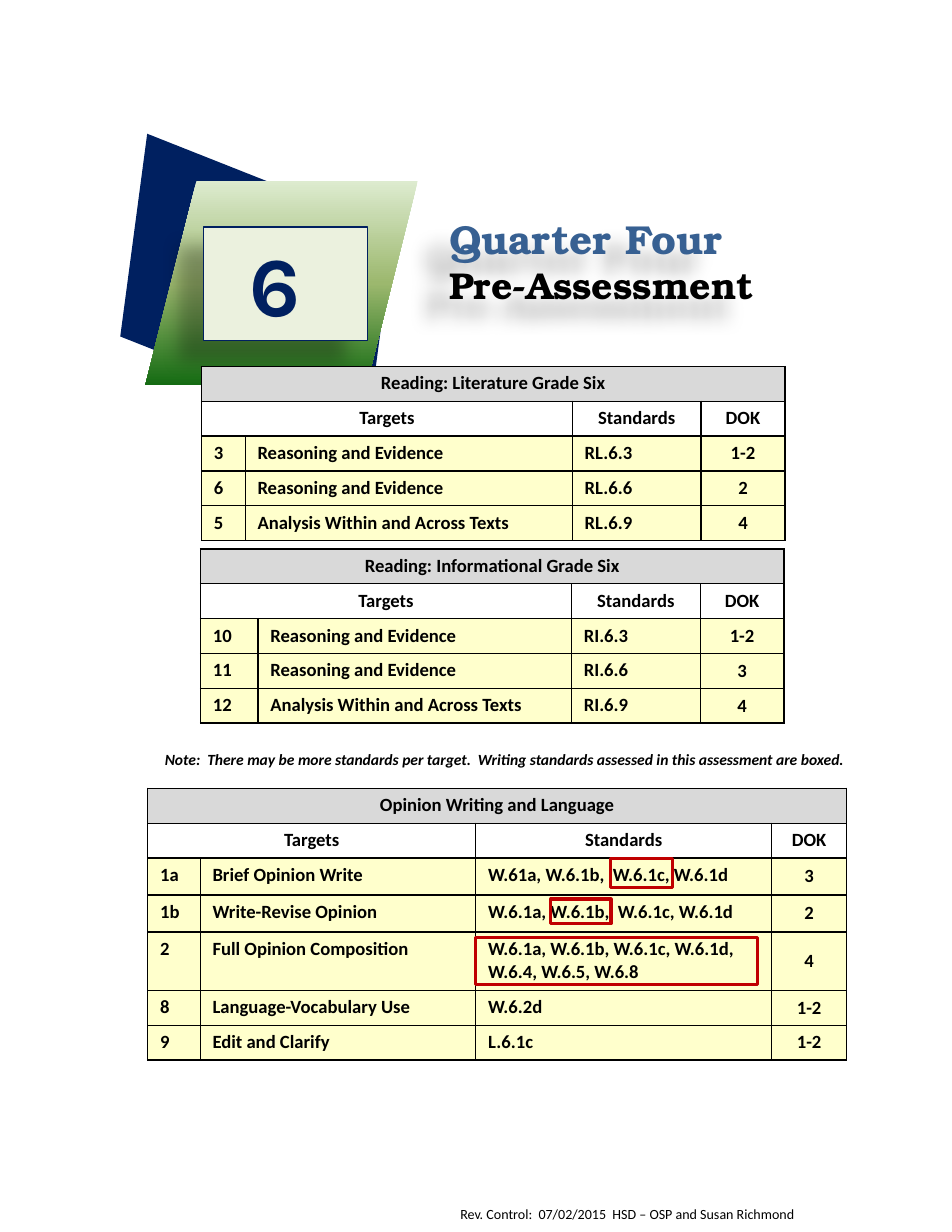
from copy import deepcopy

from lxml import etree
from pptx import Presentation
from pptx import util as u
from pptx.dml.color import RGBColor
from pptx.enum import shapes, text
from pptx.oxml.ns import qn

COLORS = {
    "navy": "002060", "blue": "376092", "black": "000000", "white": "FFFFFF",
    "mint": "EBF1DE", "heading": "D9D9D9", "row": "FFFFCC", "red": "C00000",
}
GREENS = ["DDEBCF", "9CB86E", "156B13"]
BODY, DISPLAY, DIGIT = "Calibri", "TeX Gyre Bonum", "Karla"
CENTER, LEFT = text.PP_ALIGN.CENTER, text.PP_ALIGN.LEFT
INSETS = {"margin_left": u.Cm(0.28), "margin_right": u.Cm(0.28),
          "margin_top": u.Cm(0.13), "margin_bottom": u.Cm(0.13)}
READING_ROWS = [0.79] * 5


def rgb(name):
    return RGBColor.from_string(COLORS[name])


def set_all(target, values):
    for name, value in values.items():
        setattr(target, name, value)


def write(paragraph, content, size, font=BODY, color="black", align=LEFT, **styles):
    paragraph.alignment = align
    run = paragraph.add_run()
    run.text = content
    set_all(run.font, {"size": u.Pt(size), "name": font, **styles})
    run.font.color.rgb = rgb(color)


def add_shape(slide, kind, box, fill=None, line=None, width=0.75):
    shape = slide.shapes.add_shape(kind, *map(u.Cm, box))
    shape.shadow.inherit = False
    if fill:
        shape.fill.solid()
        shape.fill.fore_color.rgb = rgb(fill)
    else:
        shape.fill.background()
    if line:
        shape.line.color.rgb = rgb(line)
        shape.line.width = u.Pt(width)
    else:
        shape.line.fill.background()
    return shape


def add_text_box(slide, box):
    frame_shape = slide.shapes.add_textbox(*map(u.Cm, box))
    set_all(frame_shape.text_frame, {"word_wrap": True, **INSETS})
    return frame_shape


def cast_shadow(shape):
    shape.shadow.inherit = False
    effects = shape._element.spPr.find(qn("a:effectLst"))
    shadow = etree.SubElement(effects, qn("a:outerShdw"), blurRad="150000",
                              dist="250000", dir="8460000", algn="ctr", rotWithShape="0")
    color = etree.SubElement(shadow, qn("a:srgbClr"), val=COLORS["black"])
    etree.SubElement(color, qn("a:alpha"), val="28000")


def add_borders(cell):
    properties = cell._tc.get_or_add_tcPr()
    for position, side in enumerate(("lnL", "lnR", "lnT", "lnB")):
        line = etree.Element(qn(f"a:{side}"), w=str(u.Pt(1)))
        fill = etree.SubElement(line, qn("a:solidFill"))
        etree.SubElement(fill, qn("a:srgbClr"), val=COLORS["black"])
        properties.insert(position, line)


def add_emblem(slide, left, top):
    """Grade number on two overlapping parallelograms."""
    slant = shapes.MSO_SHAPE.PARALLELOGRAM
    back = add_shape(slide, slant, (left, top + 0.08, 7.14, 4.5), "navy")
    back.rotation = 21.6
    back._element.spPr.xfrm.set("flipH", "1")

    front = add_shape(slide, slant, (left + 1.04, top, 6.17, 4.62))
    front.fill.gradient()
    front.fill.gradient_angle = 270
    stops = front._element.spPr.find(".//" + qn("a:gsLst"))
    stops.insert(1, deepcopy(stops[0]))
    for index, (stop, color) in enumerate(zip(front.fill.gradient_stops, GREENS)):
        stop.position = index / 2
        stop.color.rgb = RGBColor.from_string(color)

    plate = add_shape(slide, shapes.MSO_SHAPE.RECTANGLE,
                      (left + 2.36, top + 1.04, 3.71, 2.57), "mint", "navy")
    cast_shadow(plate)
    plate.text_frame.vertical_anchor = text.MSO_ANCHOR.TOP
    write(plate.text_frame.paragraphs[0], "6 ", 54, DIGIT, "navy", CENTER, bold=True)


def add_title(slide, box):
    title = add_text_box(slide, box)
    cast_shadow(title)
    frame = title.text_frame
    write(frame.paragraphs[0], "Quarter Four", 26, DISPLAY, "blue", bold=True)
    write(frame.add_paragraph(), "Pre-Assessment", 24, DISPLAY, bold=True)


def add_target_table(slide, left, top, widths, heights, heading, targets):
    """Heading row, column names, then one row for each target."""
    rows = [(heading, "", "", ""), ("Targets", "", "Standards", "DOK"), *targets]
    frame = slide.shapes.add_table(len(rows), len(widths), u.Cm(left), u.Cm(top),
                                   u.Cm(sum(widths)), u.Cm(sum(heights)))
    table = frame.table
    for column, width in zip(table.columns, widths):
        column.width = u.Cm(width)
    for row, height in zip(table.rows, heights):
        row.height = u.Cm(height)
    table.cell(0, 0).merge(table.cell(0, 3))
    table.cell(1, 0).merge(table.cell(1, 1))

    fills = ["heading", "white"] + ["row"] * len(targets)
    for row_index, values in enumerate(rows):
        for column_index, value in enumerate(values):
            cell = table.cell(row_index, column_index)
            set_all(cell, INSETS)
            cell.fill.solid()
            cell.fill.fore_color.rgb = rgb(fills[row_index])
            add_borders(cell)
            is_level = row_index > 1 and column_index == 3
            if is_level:
                cell.vertical_anchor = text.MSO_ANCHOR.MIDDLE
            if value:
                align = CENTER if row_index < 2 or is_level else LEFT
                write(cell.text_frame.paragraphs[0], value, 12, align=align, bold=True)


def add_writing_section(slide, left, top):
    """Writing table with the assessed standards boxed."""
    add_target_table(
        slide, left, top, [1.19, 6.25, 6.71, 1.7],
        [0.79, 0.79, 0.84, 0.84, 1.32, 0.79, 0.79], "Opinion Writing and Language",
        [("1a", "Brief Opinion Write", "W.61a, W.6.1b,  W.6.1c, W.6.1d", "3"),
         ("1b", "Write-Revise Opinion", "W.6.1a, W.6.1b,  W.6.1c, W.6.1d", "2"),
         ("2", "Full Opinion Composition",
          "W.6.1a, W.6.1b, W.6.1c, W.6.1d, W.6.4, W.6.5, W.6.8", "4"),
         ("8", "Language-Vocabulary Use", "W.6.2d", "1-2"),
         ("9", "Edit and Clarify", "L.6.1c", "1-2")])
    for x, y, width, height in [(9.14, 2.51, 1.37, 0.56), (10.49, 1.6, 1.42, 0.64),
                                (7.44, 3.38, 6.4, 1.07)]:
        add_shape(slide, shapes.MSO_SHAPE.RECTANGLE, (left + x, top + y, width, height),
                  line="red", width=2)


def add_line_of_text(slide, box, content, size, **styles):
    frame = add_text_box(slide, box).text_frame
    write(frame.paragraphs[0], content, size, **styles)


def main():
    presentation = Presentation()
    presentation.slide_width, presentation.slide_height = u.Cm(21.59), u.Cm(27.94)
    slide = presentation.slides.add_slide(presentation.slide_layouts[6])

    # Footer
    add_line_of_text(slide, (10.16, 27.2, 10.8, 0.66),
                     "Rev. Control:  07/02/2015  HSD – OSP and Susan Richmond", 9)
    # Header
    add_emblem(slide, 2.26, 4.11)
    add_title(slide, (9.91, 4.72, 7.9, 2.41))
    # Writing targets and their note
    add_writing_section(slide, 3.35, 17.88)
    add_line_of_text(slide, (3.18, 16.87, 16.51, 0.71),
                     "Note:  There may be more standards per target.  "
                     "Writing standards assessed in this assessment are boxed.",
                     10, align=CENTER, bold=True, italic=True)
    # Reading targets
    add_target_table(slide, 4.57, 8.31, [0.99, 7.42, 2.92, 1.9], READING_ROWS,
                     "Reading: Literature Grade Six",
                     [("3", "Reasoning and Evidence", "RL.6.3", "1-2"),
                      ("6", "Reasoning and Evidence", "RL.6.6", "2"),
                      ("5", "Analysis Within and Across Texts", "RL.6.9", "4")])
    add_target_table(slide, 4.55, 12.45, [1.3, 7.11, 2.92, 1.9], READING_ROWS,
                     "Reading: Informational Grade Six",
                     [("10", "Reasoning and Evidence", "RI.6.3", "1-2"),
                      ("11", "Reasoning and Evidence", "RI.6.6", "3"),
                      ("12", "Analysis Within and Across Texts", "RI.6.9", "4")])
    presentation.save("out.pptx")


if __name__ == "__main__":
    main()
